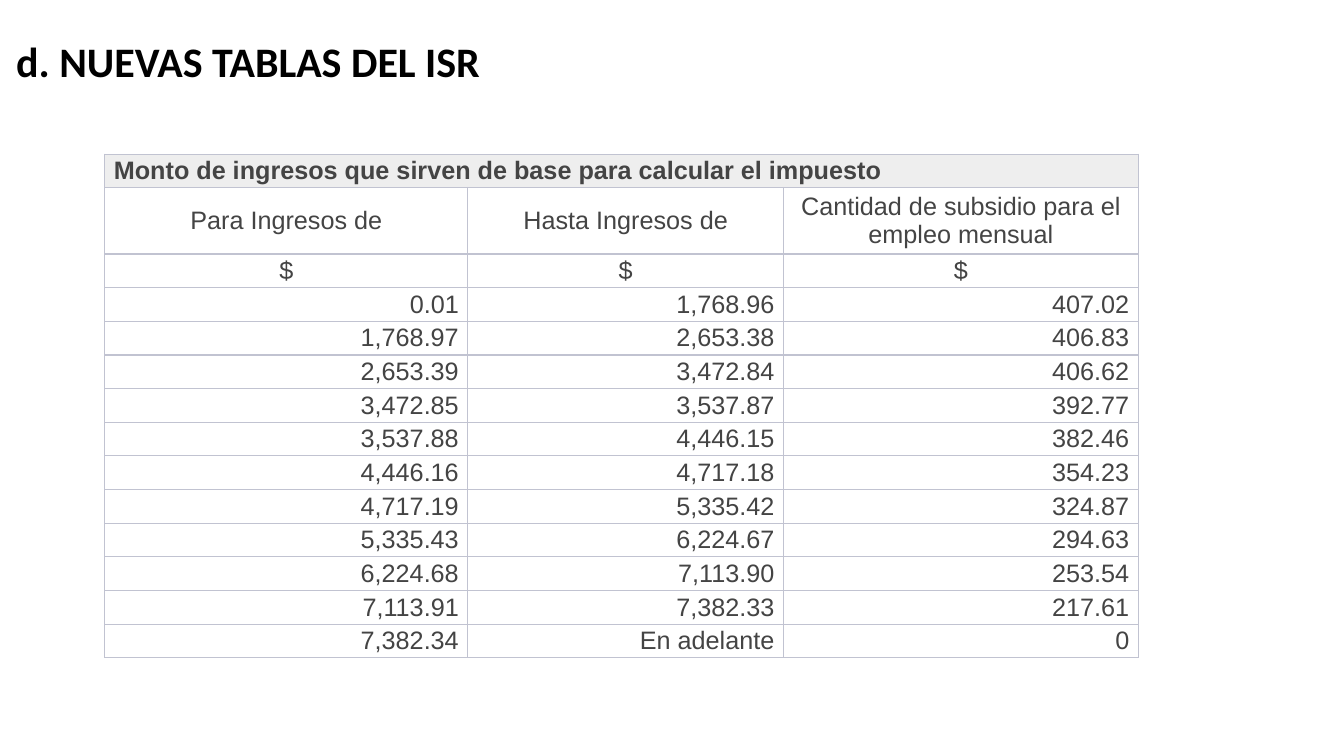
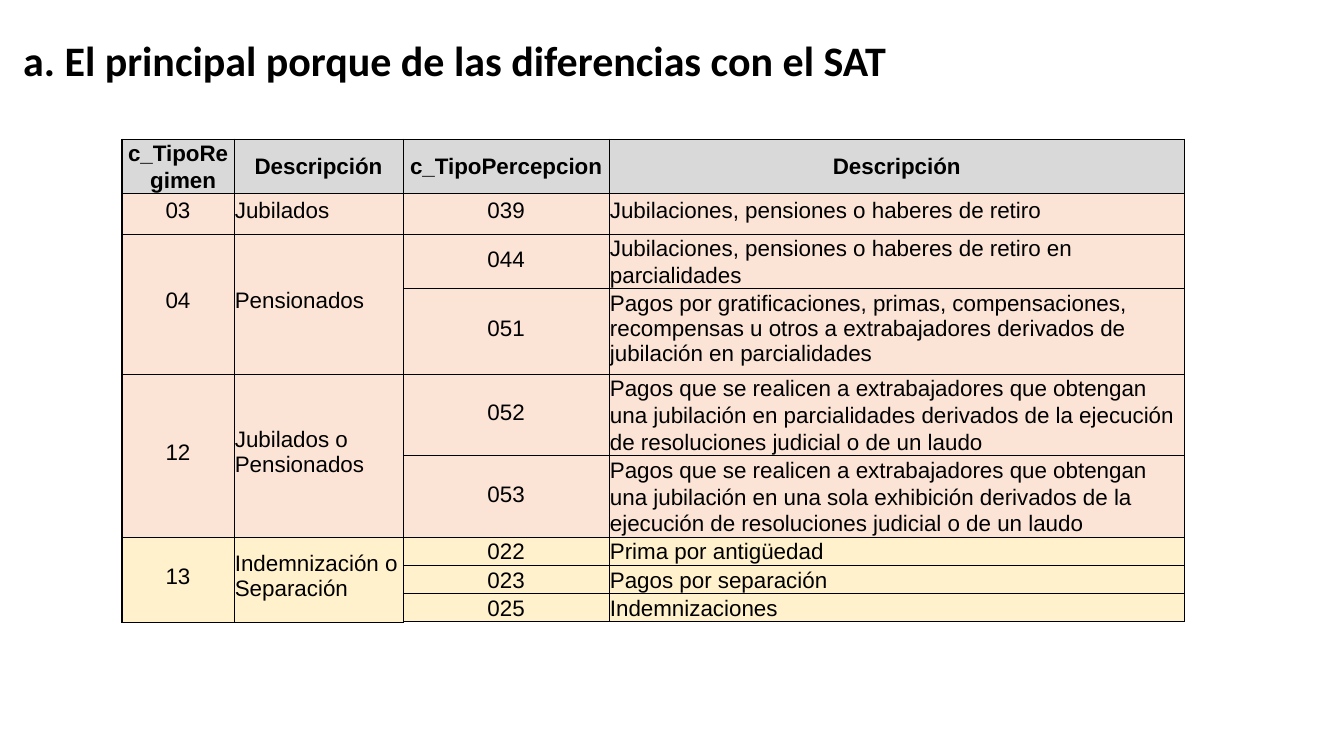
from lxml import etree
from pptx import Presentation
from pptx.dml.color import RGBColor
from pptx.enum import text
from pptx.oxml.ns import qn
from pptx.util import Inches, Pt

COLORS = {
    "black": "000000", "white": "FFFFFF", "gray_text": "444444",
    "gray_line": "C1C3D1", "band": "EEEEEE", "header": "D9D9D9",
    "peach": "FBE3D5", "cream": "FFF1CC",
}
LEFT, CENTER, RIGHT = (text.PP_ALIGN.LEFT, text.PP_ALIGN.CENTER,
                       text.PP_ALIGN.RIGHT)

SUBSIDY_HEADS = ["Para Ingresos de", "Hasta Ingresos de",
                 "Cantidad de subsidio para el empleo mensual"]
SUBSIDY_ROWS = [
    ("0.01", "1,768.96", "407.02"),
    ("1,768.97", "2,653.38", "406.83"),
    ("2,653.39", "3,472.84", "406.62"),
    ("3,472.85", "3,537.87", "392.77"),
    ("3,537.88", "4,446.15", "382.46"),
    ("4,446.16", "4,717.18", "354.23"),
    ("4,717.19", "5,335.42", "324.87"),
    ("5,335.43", "6,224.67", "294.63"),
    ("6,224.68", "7,113.90", "253.54"),
    ("7,113.91", "7,382.33", "217.61"),
    ("7,382.34", "En adelante", "0"),
]

REGIME_HEADS = ["c_TipoRegimen", "Descripción", "c_TipoPercepcion",
                "Descripción"]
# Code, name, fill and the (code, description, line spacing) of each payment
REGIMES = [
    ("03", "Jubilados", "peach", [
        ("039", "Jubilaciones, pensiones o haberes de retiro", None)]),
    ("04", "Pensionados", "peach", [
        ("044", "Jubilaciones, pensiones o haberes de retiro en parcialidades",
         19.2),
        ("051", "Pagos por gratificaciones, primas, compensaciones, "
                "recompensas u otros a extrabajadores derivados de "
                "jubilación en parcialidades", None)]),
    ("12", "Jubilados o Pensionados", "peach", [
        ("052", "Pagos que se realicen a extrabajadores que obtengan una "
                "jubilación en parcialidades derivados de la ejecución de "
                "resoluciones judicial o de un laudo", 19.2),
        ("053", "Pagos que se realicen a extrabajadores que obtengan una "
                "jubilación en una sola exhibición derivados de la ejecución "
                "de resoluciones judicial o de un laudo", 19.2)]),
    ("13", "Indemnización o Separación", "cream", [
        ("022", "Prima por antigüedad", 18.9),
        ("023", "Pagos por separación", 18.9),
        ("025", "Indemnizaciones", 18.9)]),
]


def rgb(name):
    return RGBColor.from_string(COLORS[name])


def set_font(p, name, size, color, bold=False):
    p.font.name, p.font.size, p.font.bold = name, Pt(size), bold
    p.font.color.rgb = rgb(color)


def add_title(s, title, left, top, width):
    tf = s.shapes.add_textbox(Inches(left), Inches(top), Inches(width),
                              Inches(0.52)).text_frame
    tf.word_wrap = True
    tf.vertical_anchor = text.MSO_ANCHOR.BOTTOM
    tf.margin_left = tf.margin_right = tf.margin_top = tf.margin_bottom = 0
    p = tf.paragraphs[0]
    p.text = title
    set_font(p, "Calibri", 30, "black", True)


def set_borders(cell, color, widths):
    """Draw the left, right, top and bottom edges, widths in points."""
    tc_pr = cell._tc.get_or_add_tcPr()
    for side, width in zip("LRTB", widths):
        ln = etree.SubElement(tc_pr, qn("a:ln" + side), w=str(Pt(width)))
        fill = etree.SubElement(ln, qn("a:solidFill"))
        etree.SubElement(fill, qn("a:srgbClr"), val=COLORS[color])


def add_grid(s, left, top, cols, rows, line, inner, outer):
    """Add a plain table with inner and outer line widths in points."""
    table = s.shapes.add_table(len(rows), len(cols), Inches(left), Inches(top),
                               Inches(sum(cols)), Inches(sum(rows))).table
    table.first_row = table.horz_banding = False
    for col, width in zip(table.columns, cols):
        col.width = Inches(width)
    for row, height in zip(table.rows, rows):
        row.height = Inches(height)
    for i in range(len(rows)):
        for j in range(len(cols)):
            cell = table.cell(i, j)
            edges = (j == 0, j == len(cols) - 1, i == 0, i == len(rows) - 1)
            set_borders(cell, line, [outer if e else inner for e in edges])
            cell.margin_left = cell.margin_right = 0
            cell.margin_top = cell.margin_bottom = 0
    return table


def fill_cell(cell, words, fill, size, color, align=CENTER, bold=False,
              left=0.01, right=0.01, bottom=0, spacing=None):
    cell.fill.solid()
    cell.fill.fore_color.rgb = rgb(fill)
    cell.vertical_anchor = text.MSO_ANCHOR.MIDDLE
    cell.margin_left, cell.margin_right = Inches(left), Inches(right)
    cell.margin_bottom = Inches(bottom)
    p = cell.text_frame.paragraphs[0]
    p.text = words
    p.alignment = align
    if spacing:
        p.line_spacing = Pt(spacing)
    set_font(p, "Arial", size, color, bold)
    return p


def add_subsidy_table(s, left, top):
    body = [SUBSIDY_HEADS, ["$"] * 3] + SUBSIDY_ROWS
    heights = [0.33, 0.66] + [0.334] * (len(body) - 1)
    table = add_grid(s, left, top, [3.6, 3.13, 3.52], heights,
                     "gray_line", 1, 1)
    table.cell(0, 0).merge(table.cell(0, 2))
    fill_cell(table.cell(0, 0),
              "Monto de ingresos que sirven de base para calcular el impuesto",
              "band", 18, "gray_text", LEFT, True, left=0.09)
    for i, row in enumerate(body, 1):
        align, right = (CENTER, 0.01) if i < 3 else (RIGHT, 0.09)
        for j, words in enumerate(row):
            fill_cell(table.cell(i, j), words, "white", 18, "gray_text",
                      align, right=right)


def add_regime_table(s, left, top):
    table = add_grid(s, left, top, [1.11, 1.68, 2.04, 5.71],
                     [0.54, 0.4, 0.54] + [0.81] * 3 + [0.28] * 3,
                     "black", 0.5, 1)
    for j, words in enumerate(REGIME_HEADS):
        p = fill_cell(table.cell(0, j), words, "header", 16, "black",
                      LEFT if j == 0 else CENTER, True, left=0, right=0,
                      spacing=19.2 if j == 0 else None)
        if j == 0:
            p_pr = p._p.get_or_add_pPr()
            p_pr.set("marL", str(Inches(0.28)))
            p_pr.set("indent", str(Inches(-0.22)))
    i = 1
    for code, name, fill, payments in REGIMES:
        last = i + len(payments) - 1
        for j, (words, align) in enumerate([(code, CENTER), (name, LEFT)]):
            if last > i:
                table.cell(i, j).merge(table.cell(last, j))
            fill_cell(table.cell(i, j), words, fill, 16, "black", align,
                      bottom=0.06)
        for payment, description, spacing in payments:
            bottom = 0 if spacing == 18.9 else 0.05
            fill_cell(table.cell(i, 2), payment, fill, 16, "black",
                      bottom=bottom, spacing=spacing)
            fill_cell(table.cell(i, 3), description, fill, 16, "black", LEFT,
                      right=0.1, bottom=0 if spacing else 0.05,
                      spacing=spacing)
            i += 1


def main():
    prs = Presentation()
    prs.slide_width, prs.slide_height = Inches(13.33), Inches(7.5)
    blank = prs.slide_layouts[6]

    s = prs.slides.add_slide(blank)
    add_title(s, "d. NUEVAS TABLAS DEL ISR", 0.16, 0.33, 8.79)
    add_subsidy_table(s, 1.04, 1.53)

    s = prs.slides.add_slide(blank)
    add_title(s, "a. El principal porque de las diferencias con el SAT",
              0.23, 0.32, 9.84)
    add_regime_table(s, 1.21, 1.38)

    prs.save("out.pptx")


if __name__ == "__main__":
    main()
